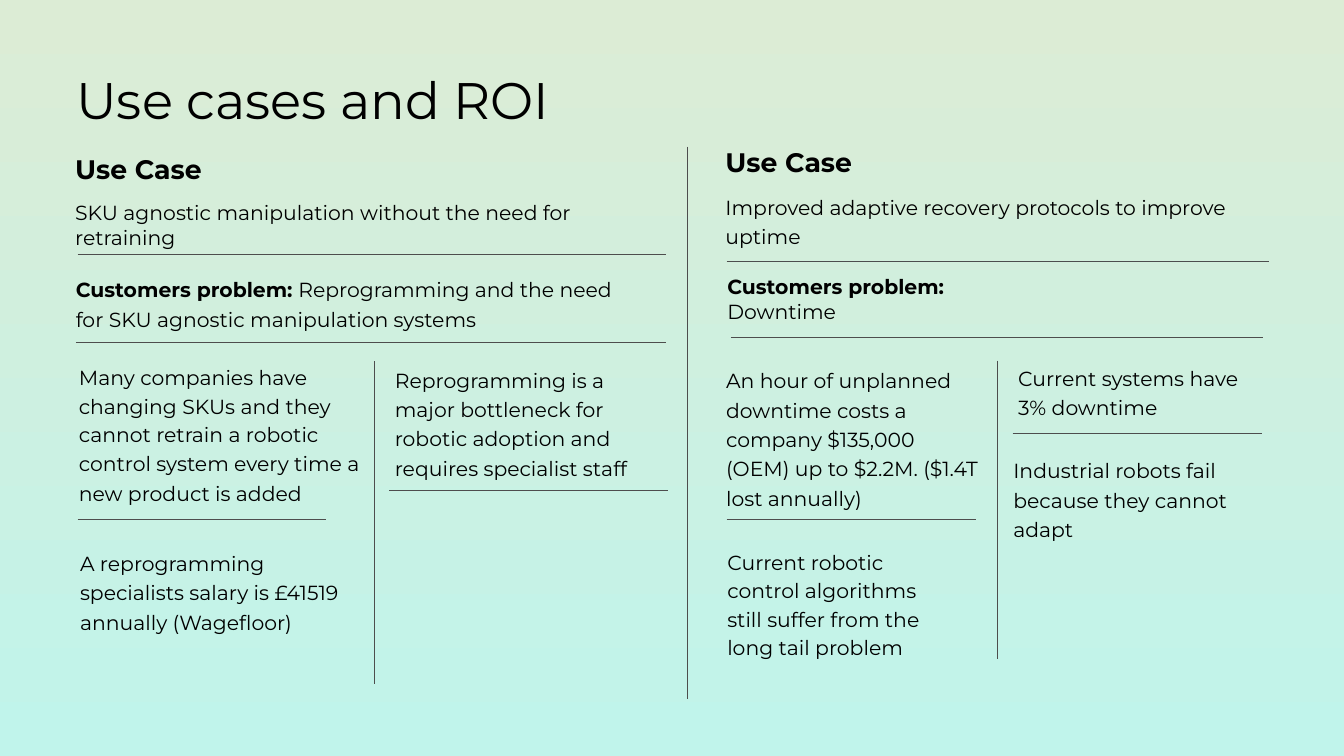
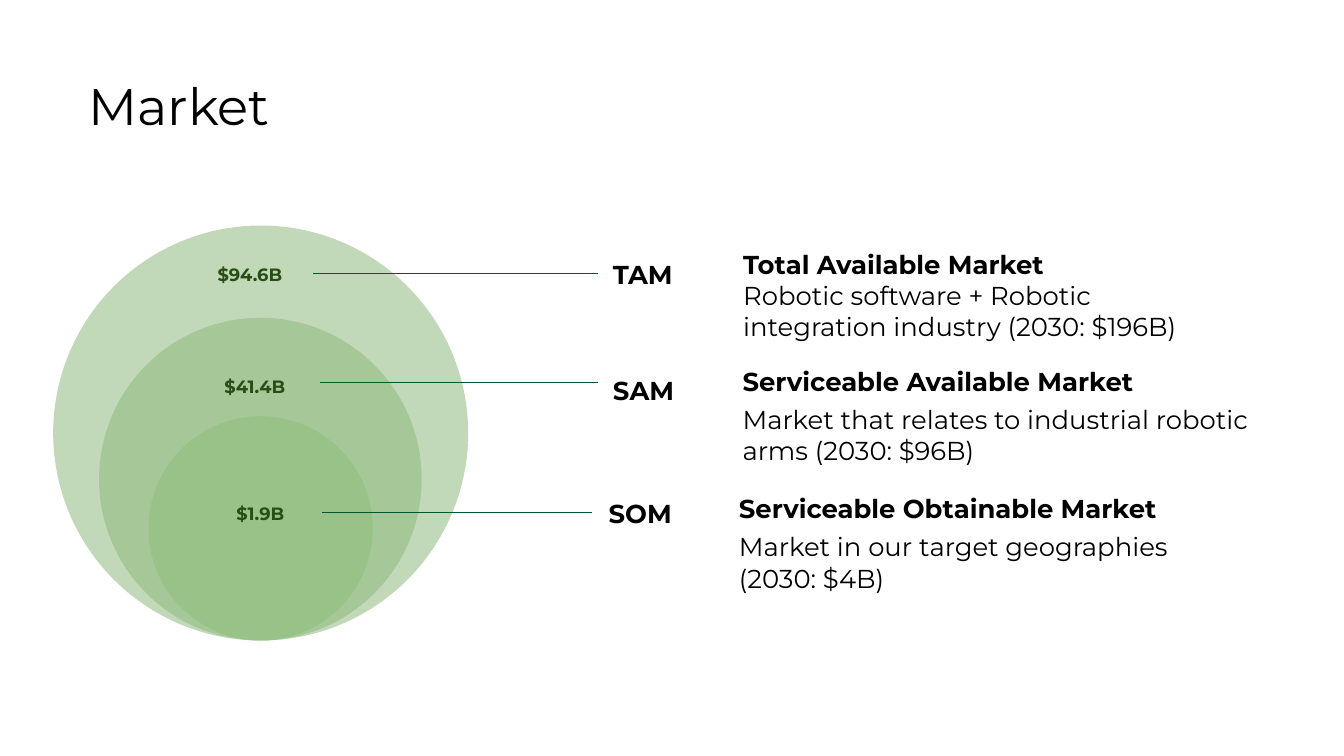
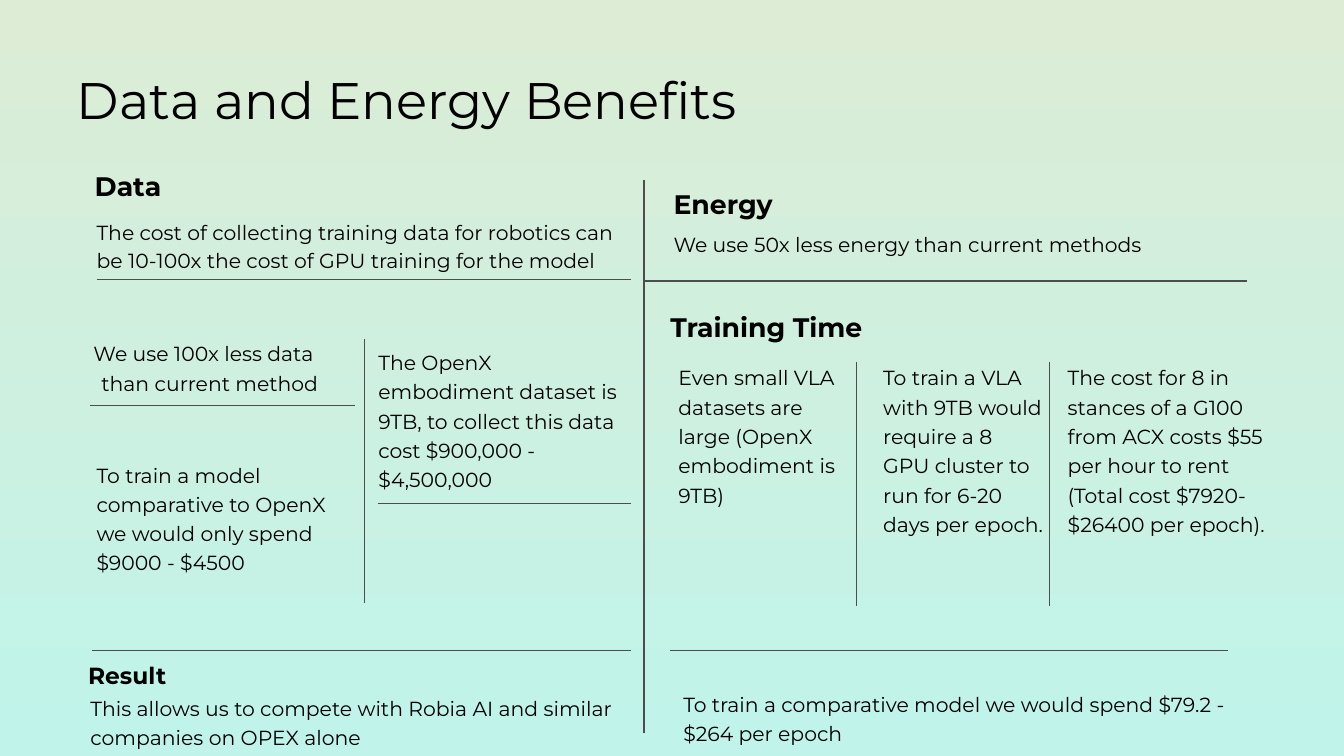
"""Build three pitch slides: use cases and ROI, market, data and energy benefits."""
from dataclasses import dataclass

from lxml.etree import SubElement
from pptx import Presentation
from pptx.dml.color import RGBColor
from pptx.enum.shapes import MSO_CONNECTOR as Connector, MSO_SHAPE as Shape
from pptx.enum.text import PP_ALIGN as Align
from pptx.oxml.ns import qn
from pptx.util import Emu, Pt

PX = 9144
SLIDE_SIZE = (2199, 1237)
FONT = "Montserrat"
COLORS = {
    "ink": "000000", "rule": "4D4D4D", "leader": "085630", "value": "274E13",
    "ring": "92BC81", "core": "99C289", "sky_top": "DCECD5", "sky_end": "C0F4EB",
    "white": "FFFFFF",
}
STYLES = {
    "title": (60.5, False, "ink"),
    "heading": (31.5, True, "ink"),
    "subheading": (27.5, True, "ink"),
    "body": (24, False, "ink"),
    "strong": (24, True, "ink"),
    "market": (30.5, True, "ink"),
    "detail": (30.5, False, "ink"),
    "value": (21, True, "value"),
}
THIN, THICK = 0.8, 1.65


@dataclass
class Para:
    """One paragraph: (style, text) runs and their spacing."""
    runs: list
    spacing: float = 1.2
    before: float = 0
    hang: int = 0


def body(text, spacing=1.2, hang=0):
    """Return a plain body paragraph."""
    return Para([("body", text)], spacing, hang=hang)


def head(text, style="heading", spacing=1):
    """Return a one-run paragraph in a heading style."""
    return Para([(style, text)], spacing)


USE_CASES = {
    "title": (125, 111, "Use cases and ROI"),
    "texts": [
        (123, 250, 962, 159, [
            head("Use Case"),
            Para([("body", "SKU agnostic manipulation without the need for retraining")], 1, 18.3)]),
        (124, 446, 907, 88, [
            Para([("strong", "Customers problem: "),
                  ("body", "Reprogramming and the need for SKU agnostic manipulation systems")])]),
        (129, 589, 480, 233, [
            body("Many companies have changing SKUs and they"),
            body("cannot retrain a robotic", 1.15),
            body("control system every time a new product is added")]),
        (646, 594, 392, 185, [
            body("Reprogramming is a major bottleneck for robotic adoption and requires specialist staff")]),
        (131, 894, 447, 137, [
            body("A reprogramming specialists salary is £41519 annually (Wagefloor)")]),
        (1187, 238, 837, 163, [
            head("Use Case"),
            Para([("body", "Improved adaptive recovery protocols to improve uptime")], 1.2, 15.1)]),
        (1190, 449, 500, 81, [
            Para([("strong", "Customers problem: "), ("body", "Downtime")], 1)]),
        (1188, 595, 420, 233, [
            body("An hour of unplanned downtime costs a company $135,000 (OEM) up to $2.2M. "
                 "($1.4T lost annually)")]),
        (1666, 591, 394, 88, [body("Current systems have 3% downtime")]),
        (1658, 742, 369, 137, [body("Industrial robots fail because they cannot adapt")]),
        (1190, 894, 370, 180, [
            body("Current robotic control algorithms still suffer from the long tail problem", 1.16)]),
    ],
    "rules": [
        (127, 417, 1090, 417, THIN), (124, 560, 1090, 560, THIN),
        (127, 849, 533, 849, THIN), (637, 803, 1093, 803, THIN),
        (1189, 427, 2076, 427, THIN), (1196, 552, 2067, 552, THIN),
        (1189, 849, 1597, 849, THIN), (1657, 709, 2065, 709, THIN),
        (613, 591, 613, 1119, THIN), (1632, 590, 1632, 1079, THIN),
        (1125, 240, 1125, 1144, THICK),
    ],
}

BENEFITS = {
    "title": (126, 111, "Data and Energy Benefits"),
    "texts": [
        (155, 277, 308, 53, [head("Data")]),
        (158, 354, 873, 87, [
            body("The cost of collecting training data for robotics can be 10-100x the cost of "
                 "GPU training for the model", 1.16)]),
        (153, 551, 374, 88, [body("We use 100x less data than current method", hang=13)]),
        (158, 749, 382, 185, [
            body("To train a model comparative to OpenX we would only spend"),
            body("$9000 - $4500", 1.16)]),
        (619, 565, 412, 233, [
            body("The OpenX embodiment dataset is 9TB, to collect this data cost $900,000 - $4,500,000")]),
        (144, 1082, 308, 47, [head("Result", "subheading")]),
        (148, 1131, 881, 88, [
            body("This allows us to compete with Robia AI and similar companies on OPEX alone")]),
        (1102, 281, 938, 120, [
            head("Energy", spacing=1.5),
            body("We use 50x less energy than current methods", 1.5)]),
        (1097, 508, 325, 53, [head("Training Time")]),
        (1110, 590, 262, 282, [
            body("Even small VLA datasets are large (OpenX embodiment is 9TB)")]),
        (1445, 590, 262, 330, [
            body("To train a VLA with 9TB would require a 8 GPU cluster to run for 6-20 days per epoch.")]),
        (1747, 590, 359, 330, [
            body("The cost for 8 in stances of a G100 from ACX costs $55 per hour to rent "
                 "(Total cost $7920-$26400 per epoch).")]),
        (1118, 1124, 905, 89, [
            body("To train a comparative model we would spend $79.2 -"), body("$264 per epoch")]),
    ],
    "rules": [
        (158, 457, 1033, 457, THIN), (1054, 460, 2040, 460, THICK),
        (150, 1064, 1033, 1064, THIN), (1097, 1064, 2009, 1064, THIN),
        (618, 823, 1032, 823, THIN), (147, 663, 581, 663, THIN),
        (596, 555, 596, 986, THIN), (1401, 592, 1401, 991, THIN),
        (1717, 592, 1717, 991, THIN), (1054, 295, 1054, 1199, THICK),
    ],
}

MARKET_TITLE = (145, 122, "Market")
RING_CENTER, RING_BOTTOM = 426, 1048
RINGS = [(679, "ring", 56), (528, "ring", 56), (367, "core", 100)]
MARKETS = [
    {"code": ("TAM", 1003, 416), "value": ("$94.6B", 324, 431), "leader": (512, 979, 448),
     "name": ("Total Available Market", 1216, 406),
     "detail": ("Robotic software + Robotic integration industry (2030: $196B)", 458, 794)},
    {"code": ("SAM", 1003, 605), "value": ("$41.4B", 332, 615), "leader": (523, 979, 626),
     "name": ("Serviceable Available Market", 1215, 598),
     "detail": ("Market that relates to industrial robotic arms (2030: $96B)", 661, 881)},
    {"code": ("SOM", 996, 806), "value": ("$1.9B", 341, 822), "leader": (527, 969, 838),
     "name": ("Serviceable Obtainable Market", 1209, 806),
     "detail": ("Market in our target geographies (2030: $4B)", 869, 801)},
]


def px(*lengths):
    """Turn px lengths into EMU."""
    return [Emu(length * PX) for length in lengths]


def rgb(name):
    """Look up a named colour."""
    return RGBColor.from_string(COLORS[name])


def add_text(slide, x, y, w, h, paras, align=Align.LEFT):
    """Add a wrapped text box without insets."""
    frame = slide.shapes.add_textbox(*px(x, y, w, h)).text_frame
    frame.word_wrap = True
    frame.margin_left = frame.margin_right = frame.margin_top = frame.margin_bottom = 0
    for index, para in enumerate(paras):
        line = frame.add_paragraph() if index else frame.paragraphs[0]
        line.alignment = align
        line.line_spacing = para.spacing
        if para.before:
            line.space_before = Pt(para.before)
        if para.hang:
            properties = line._p.get_or_add_pPr()
            properties.set("marL", str(para.hang * PX))
            properties.set("indent", str(-para.hang * PX))
        for style, text in para.runs:
            run = line.add_run()
            run.text = text
            size, bold, color = STYLES[style]
            run.font.name, run.font.size, run.font.bold = FONT, Pt(size), bold
            run.font.color.rgb = rgb(color)


def add_rule(slide, x1, y1, x2, y2, width, color="rule"):
    """Add a straight line without a shadow."""
    rule = slide.shapes.add_connector(Connector.STRAIGHT, *px(x1, y1, x2, y2))
    rule.line.width = Pt(width)
    rule.line.color.rgb = rgb(color)
    SubElement(rule._element.spPr, qn("a:effectLst"))


def add_ring(slide, diameter, color, opacity):
    """Add a market circle resting on the shared bottom point."""
    left = RING_CENTER - diameter // 2
    ring = slide.shapes.add_shape(
        Shape.OVAL, *px(left, RING_BOTTOM - diameter, diameter, diameter))
    ring.shadow.inherit = False
    ring.line.fill.background()
    ring.fill.solid()
    ring.fill.fore_color.rgb = rgb(color)
    if opacity < 100:
        tint = ring._element.spPr.find(".//" + qn("a:srgbClr"))
        SubElement(tint, qn("a:alpha"), val=str(opacity * 1000))


def add_slide(deck, title, gradient):
    """Add a blank slide with its background and title."""
    slide = deck.slides.add_slide(deck.slide_layouts[6])
    fill = slide.background.fill
    if gradient:
        fill.gradient()
        fill.gradient_angle = 270
        for stop, color in zip(fill.gradient_stops, ("sky_top", "sky_end")):
            stop.color.rgb = rgb(color)
    else:
        fill.solid()
        fill.fore_color.rgb = rgb("white")
    x, y, text = title
    add_text(slide, x, y, 1180, 102, [head(text, "title")])
    return slide


def add_columns_slide(deck, content):
    """Add a slide of text columns split by rules."""
    slide = add_slide(deck, content["title"], True)
    for text in content["texts"]:
        add_text(slide, *text)
    for rule in content["rules"]:
        add_rule(slide, *rule)


def add_market_slide(deck):
    """Add the nested market circles with their captions."""
    slide = add_slide(deck, MARKET_TITLE, False)
    for ring in RINGS:
        add_ring(slide, *ring)
    for market in MARKETS:
        start, end, level = market["leader"]
        add_rule(slide, start, level, end, level, 1.27, "leader")
        code, x, y = market["code"]
        add_text(slide, x, y, 120, 65, [head(code, "market", 1.15)])
        value, x, y = market["value"]
        add_text(slide, x, y, 170, 36, [head(value, "value")], Align.CENTER)
        name, x, y = market["name"]
        detail, detail_y, width = market["detail"]
        add_text(slide, x, y, width, 52, [head(name, "market")])
        add_text(slide, x, detail_y, width, 104, [head(detail, "detail")])


def main():
    """Build and save the deck."""
    deck = Presentation()
    deck.slide_width, deck.slide_height = px(*SLIDE_SIZE)
    add_columns_slide(deck, USE_CASES)
    add_market_slide(deck)
    add_columns_slide(deck, BENEFITS)
    deck.save("out.pptx")


if __name__ == "__main__":
    main()
